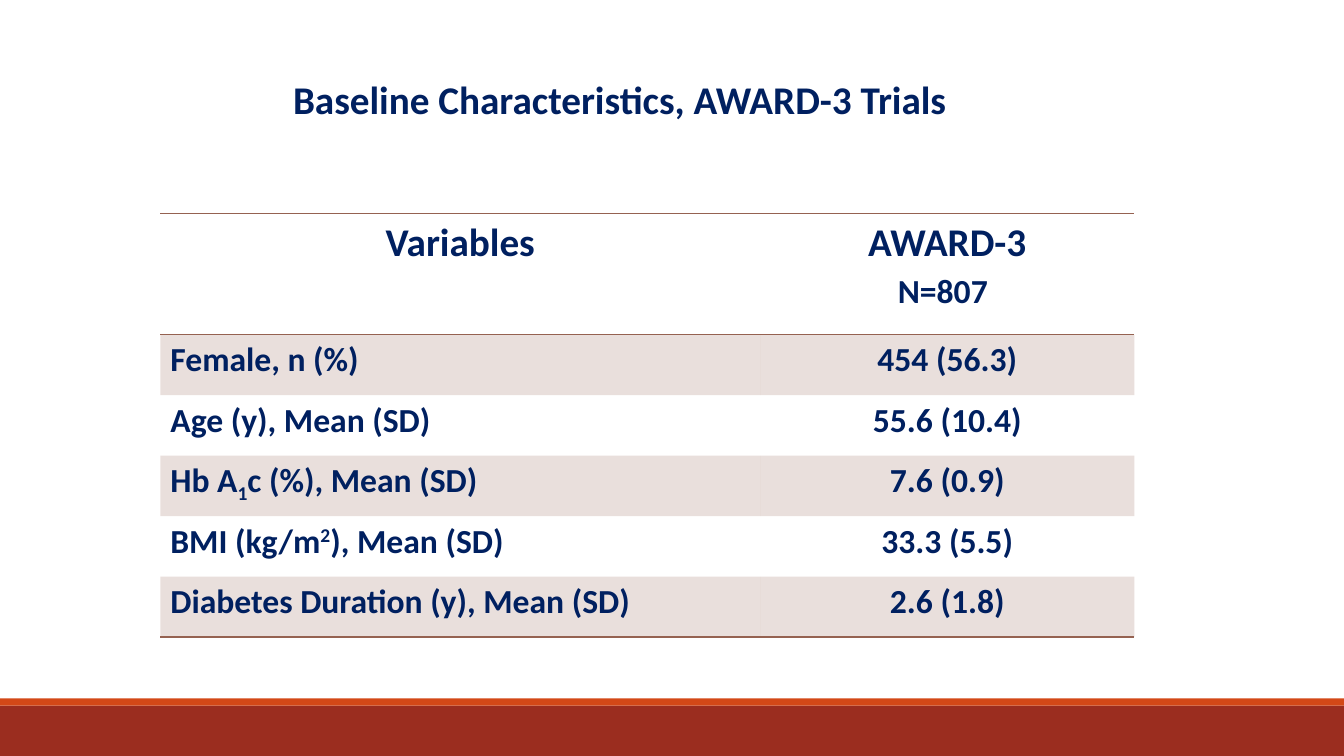
from lxml.etree import SubElement as Sub
from pptx import Presentation
from pptx.dml.color import RGBColor as RGB
from pptx.enum.shapes import MSO_SHAPE as SHAPE
from pptx.enum.text import MSO_ANCHOR as ANCHOR, PP_ALIGN as ALIGN
from pptx.oxml.ns import qn
from pptx.util import Inches, Pt

COLORS = {"text": "002060", "rule": "956251", "bar": "9B2D1F", "strip": "D34817"}
PLAIN = "{2D5ABB26-0587-4C30-8999-92F81FD0307C}"  # table style without grid


def write(par, runs, align):
    """Fill a paragraph with runs of (text, size, baseline percent)."""
    par.alignment = align
    for text, size, base in runs:
        run = par.add_run()
        run.text = text
        look = {"name": "Calibri", "size": Pt(size), "bold": True}
        for key, value in look.items():
            setattr(run.font, key, value)
        run.font.color.rgb = RGB.from_string(COLORS["text"])
        if base:
            run.font._element.set("baseline", str(base * 1000))


def rule(cell, side):
    """Draw a thin line on one side of a cell."""
    line = Sub(cell._tc.get_or_add_tcPr(), qn("a:" + side), w=str(Pt(1)))
    fill = Sub(line, qn("a:solidFill"))
    Sub(fill, qn("a:srgbClr"), val=COLORS["rule"])


deck = Presentation()
deck.slide_width, deck.slide_height = Inches(13.33), Inches(7.5)
slide = deck.slides.add_slide(deck.slide_layouts[6])
shapes = slide.shapes

# Footer bands
for name, top, height in [("bar", 7, 0.5), ("strip", 6.93, 0.07)]:
    band = shapes.add_shape(SHAPE.RECTANGLE, 0, Inches(top),
                            deck.slide_width, Inches(height))
    band.shadow.inherit = False
    band.fill.solid()
    band.fill.fore_color.rgb = RGB.from_string(COLORS[name])
    band.line.fill.background()

# Table content: each cell is a list of paragraphs, each a list of runs
head = [
    [[("Variables", 28, 0)]],
    [[("AWARD-3", 28, 0)], [("N=807", 24, 0), (" ", 28, 0)]],
]
body = [
    ([("Female, n (%)", 0)], "454 (56.3)"),
    ([("Age (y), Mean (SD)", 0)], "55.6 (10.4)"),
    ([("Hb A", 0), ("1", -25), ("c (%), Mean (SD)", 0)], "7.6 (0.9)"),
    ([("BMI (kg/m", 0), ("2", 30), ("), Mean (SD)", 0)], "33.3 (5.5)"),
    ([("Diabetes Duration (y), Mean (SD)", 0)], "2.6 (1.8)"),
]
rows = [head]
for label, value in body:
    rows.append([[[(text, 24, base) for text, base in label]], [[(value, 24, 0)]]])

# Table frame
frame = shapes.add_table(len(rows), 2, Inches(1.59), Inches(2.12),
                         Inches(9.66), Inches(4.2))
table = frame.table
table._tbl.tblPr.find(qn("a:tableStyleId")).text = PLAIN
for col, width in zip(table.columns, (5.95, 3.71)):
    col.width = Inches(width)

# Table cells
for r, row in enumerate(rows):
    table.rows[r].height = Inches(0.6 if r else 1.2)
    for c, pars in enumerate(row):
        cell = table.cell(r, c)
        cell.vertical_anchor = ANCHOR.TOP
        align = ALIGN.LEFT if r and c == 0 else ALIGN.CENTER
        for i, runs in enumerate(pars):
            frame = cell.text_frame
            write(frame.add_paragraph() if i else frame.paragraphs[0], runs, align)
        if r == 0:
            rule(cell, "lnT")
        if r in (0, len(rows) - 1):
            rule(cell, "lnB")
        if r % 2:
            cell.fill.solid()
            cell.fill.fore_color.rgb = RGB.from_string(COLORS["rule"])
            tint = cell._tc.tcPr.find(qn("a:solidFill")).find(qn("a:srgbClr"))
            Sub(tint, qn("a:alpha"), val="20000")
        else:
            cell.fill.background()

# Title
title = shapes.add_textbox(Inches(2.09), Inches(0.7), Inches(8.11), Inches(0.57))
title.text_frame.word_wrap = True
write(title.text_frame.paragraphs[0],
      [("Baseline Characteristics, AWARD-3 Trials", 28, 0)], ALIGN.CENTER)

deck.save("out.pptx")
